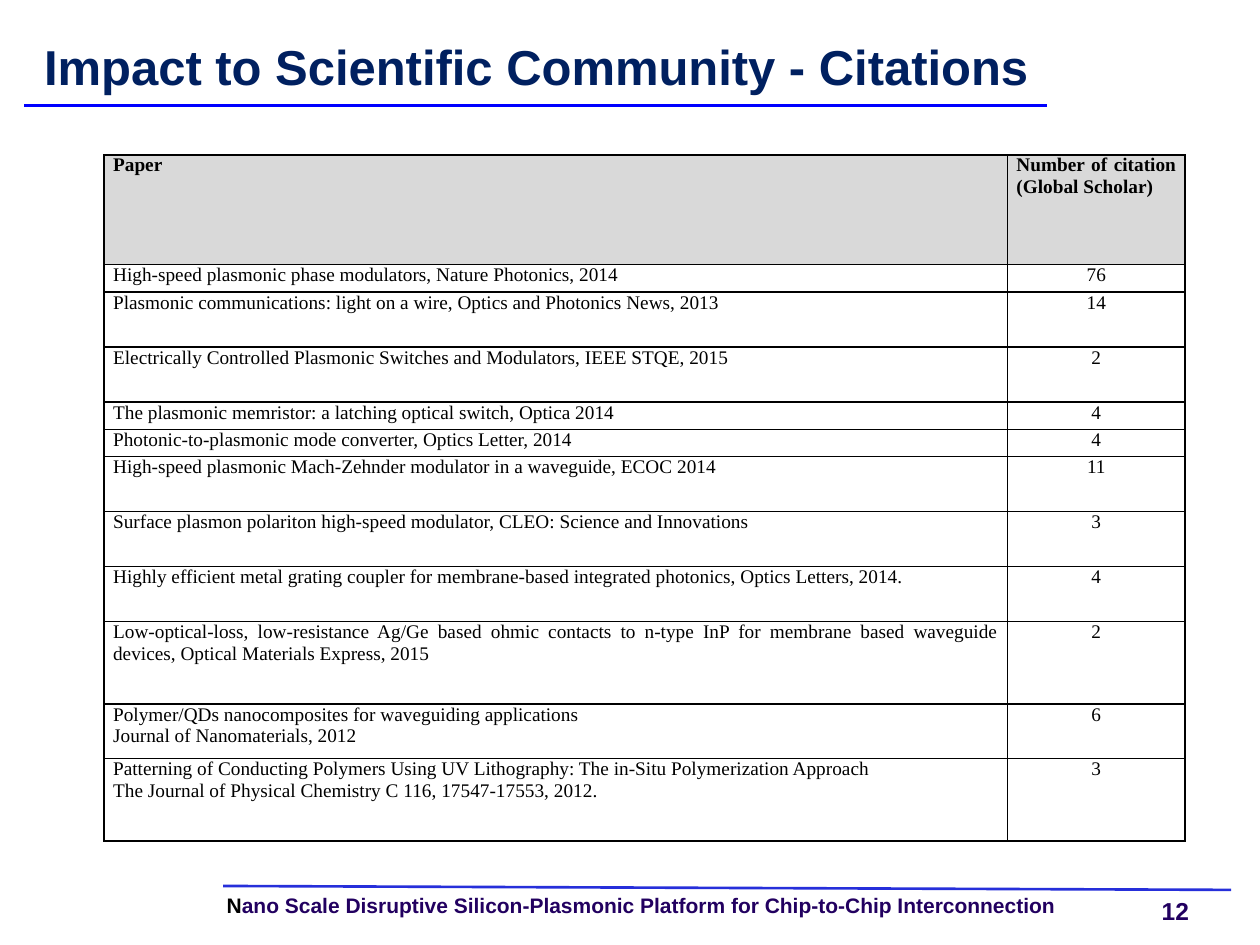
from lxml import etree
from pptx import Presentation
from pptx.dml.color import RGBColor
from pptx.enum.shapes import MSO_CONNECTOR
from pptx.enum.text import MSO_ANCHOR, MSO_AUTO_SIZE, PP_ALIGN
from pptx.oxml import parse_xml
from pptx.oxml.ns import nsdecls, qn
from pptx.util import Cm, Pt

STRAIGHT = MSO_CONNECTOR.STRAIGHT
MIDDLE, TOP = MSO_ANCHOR.MIDDLE, MSO_ANCHOR.TOP
NO_AUTOFIT = MSO_AUTO_SIZE.NONE
LEFT, CENTER, JUSTIFY = PP_ALIGN.LEFT, PP_ALIGN.CENTER, PP_ALIGN.JUSTIFY

BLACK = RGBColor(0x00, 0x00, 0x00)
NAVY = RGBColor(0x00, 0x20, 0x60)
INDIGO = RGBColor(0x22, 0x00, 0x60)
TITLE_RULE = RGBColor(0x00, 0x00, 0xFF)
FOOTER_RULE = RGBColor(0x26, 0x2F, 0xDA)
HEADER_GREY = RGBColor(0xD9, 0xD9, 0xD9)

HEADER = ("Paper", "Number of citation (Global Scholar)", 4)
PAPERS = [
    ("High-speed plasmonic phase modulators, Nature Photonics, 2014", "76", 1),
    ("Plasmonic communications: light on a wire, Optics and Photonics News, 2013", "14", 2),
    ("Electrically Controlled Plasmonic Switches and Modulators, IEEE STQE, 2015", "2", 2),
    ("The plasmonic memristor: a latching optical switch, Optica 2014", "4", 1),
    ("Photonic-to-plasmonic mode converter, Optics Letter, 2014", "4", 1),
    ("High-speed plasmonic Mach-Zehnder modulator in a waveguide, ECOC 2014", "11", 2),
    ("Surface plasmon polariton high-speed modulator, CLEO: Science and Innovations", "3", 2),
    ("Highly efficient metal grating coupler for membrane-based integrated photonics, "
     "Optics Letters, 2014.", "4", 2),
    ("Low-optical-loss, low-resistance Ag/Ge based ohmic contacts to n-type InP for "
     "membrane based waveguide devices, Optical Materials Express, 2015", "2", 3),
    ("Polymer/QDs nanocomposites for waveguiding applications\n"
     "Journal of Nanomaterials, 2012", "6", 2),
    ("Patterning of Conducting Polymers Using UV Lithography: The in-Situ "
     "Polymerization Approach\n"
     "The Journal of Physical Chemistry C 116, 17547-17553, 2012.", "3", 3),
]


def write(p, text, size=12, font="Arial", color=BLACK, bold=True,
          align=LEFT, spacing=None):
    p.alignment = align
    if spacing is not None:
        p.line_spacing = spacing
    r = p.add_run()
    r.text = text
    r.font.size = Pt(size)
    r.font.name = font
    r.font.bold = bold
    r.font.color.rgb = color


def set_frame(tf, anchor=TOP, wrap=True):
    tf.margin_left = tf.margin_right = tf.margin_top = tf.margin_bottom = 0
    tf.vertical_anchor = anchor
    tf.word_wrap = wrap
    tf.auto_size = NO_AUTOFIT


def add_text_box(s, x, y, w, h, wrap=True):
    tf = s.shapes.add_textbox(Cm(x), Cm(y), Cm(w), Cm(h)).text_frame
    set_frame(tf, wrap=wrap)
    return tf.paragraphs[0]


def add_rule(s, x1, y1, x2, y2, color):
    rule = s.shapes.add_connector(STRAIGHT, Cm(x1), Cm(y1), Cm(x2), Cm(y2))
    rule.line.color.rgb = color
    rule.line.width = Pt(1.5)
    etree.SubElement(rule._element.spPr, qn("a:effectLst"))


def add_title(s, x, y, w, h):
    title = s.shapes.title
    title.left, title.top, title.width, title.height = Cm(x), Cm(y), Cm(w), Cm(h)
    set_frame(title.text_frame, anchor=MIDDLE)
    write(title.text_frame.paragraphs[0], "Impact to Scientific Community - Citations",
          size=28, color=NAVY, align=CENTER, spacing=Pt(32))
    add_rule(s, x - 0.02, y + 1.62, x + w, y + 1.62, TITLE_RULE)


def add_borders(cell):
    tc_pr = cell._tc.get_or_add_tcPr()
    for i, side in enumerate(("lnL", "lnR", "lnT", "lnB")):
        tc_pr.insert(i, parse_xml(
            f'<a:{side} {nsdecls("a")} w="{Pt(1)}"><a:solidFill>'
            f'<a:srgbClr val="{BLACK}"/></a:solidFill></a:{side}>'))


def fill_cell(cell, text, bold, align, fill):
    cell.margin_left = cell.margin_right = Cm(0.18)
    cell.margin_top = cell.margin_bottom = 0
    if fill is None:
        cell.fill.background()
    else:
        cell.fill.solid()
        cell.fill.fore_color.rgb = fill
    add_borders(cell)
    tf = cell.text_frame
    for i, line in enumerate(text.split("\n")):
        p = tf.add_paragraph() if i else tf.paragraphs[0]
        write(p, line, size=11, font="Times New Roman", bold=bold, align=align)


def add_citation_table(s, x, y, w, h):
    rows = [HEADER] + PAPERS
    line_height = h / sum(lines for _, _, lines in rows)
    count_width = 3.58
    table = s.shapes.add_table(len(rows), 2, Cm(x), Cm(y), Cm(w), Cm(h)).table
    table.first_row = table.horz_banding = False
    table.columns[0].width = Cm(w - count_width)
    table.columns[1].width = Cm(count_width)
    for i, (paper, count, lines) in enumerate(rows):
        is_header = i == 0
        fill = HEADER_GREY if is_header else None
        table.rows[i].height = Cm(lines * line_height)
        fill_cell(table.cell(i, 0), paper, is_header, JUSTIFY, fill)
        fill_cell(table.cell(i, 1), count, is_header, JUSTIFY if is_header else CENTER, fill)


def add_footer(s, x, y, w):
    add_rule(s, x, y, x + w, y + 0.08, FOOTER_RULE)
    p = add_text_box(s, x + 0.07, y + 0.2, 18.14, 0.46)
    write(p, "N", spacing=0.9)
    write(p, "ano Scale Disruptive Silicon-Plasmonic Platform for Chip-to-Chip Interconnection",
          color=INDIGO, spacing=0.9)
    number = add_text_box(s, x + w - 1.4, y + 0.2, 0.61, 0.58, wrap=False)
    write(number, "12", size=14, color=INDIGO)


def main():
    prs = Presentation()
    prs.slide_width, prs.slide_height = Cm(25.4), Cm(19.05)
    s = prs.slides.add_slide(prs.slide_layouts[5])
    add_footer(s, 4.5, 17.86, 20.32)
    add_title(s, 0.51, 0.51, 20.6, 1.7)
    add_citation_table(s, 2.1, 3.12, 21.79, 13.84)
    prs.save("out.pptx")


if __name__ == "__main__":
    main()
